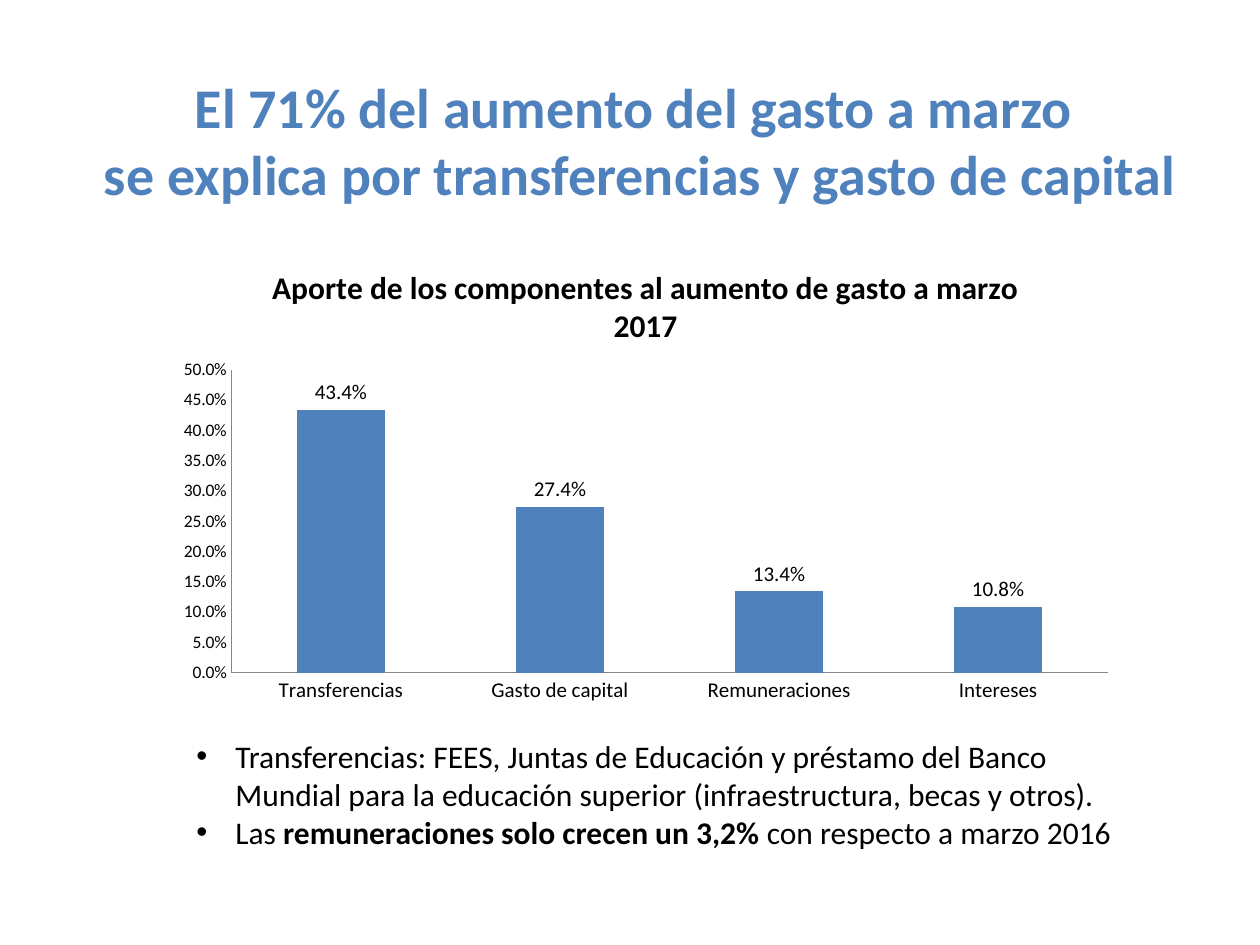
from typing import NamedTuple

from lxml import etree
from pptx import Presentation
from pptx import util as u
from pptx.chart import data as cd
from pptx.dml.color import RGBColor
from pptx.enum import chart as ch, text
from pptx.oxml import parse_xml
from pptx.oxml.ns import nsdecls, qn

SCALE = 914400 / 126  # EMU in one px


class Theme(NamedTuple):
    font: str = "Calibri"
    blue: str = "4F81BD"
    black: str = "000000"
    gray: str = "868686"
    head: int = 32
    body: int = 18
    label: int = 12
    tick: int = 10


class Box(NamedTuple):
    left: int
    top: int
    width: int
    height: int


class Run(NamedTuple):
    words: str
    bold: bool = False


class Block(NamedTuple):
    box: Box
    lines: list[list[Run]]
    size: int
    color: str
    indent: int = 0  # above zero: bulleted with this hanging indent


THEME = Theme()

TITLE = Block(Box(0, 66, 1268, 149), [
    [Run("El 71% del aumento del gasto a marzo", True)],
    [Run(" se explica por transferencias y gasto de capital", True)],
], THEME.head, THEME.blue)

NOTES = Block(Box(184, 731, 963, 127), [
    [Run("Transferencias: FEES, Juntas de Educación y préstamo del Banco Mundial "
         "para la educación superior (infraestructura, becas y otros).")],
    [Run("Las "), Run("remuneraciones solo crecen un 3,2% ", True),
     Run("con respecto a marzo 2016")],
], THEME.body, THEME.black, 39)

CHART = Box(164, 244, 963, 466)
PLOT = Box(230, 368, 877, 303)
HEADING = "Aporte de los componentes al aumento de gasto a marzo 2017"
SHARES = {"Transferencias": 0.434, "Gasto de capital": 0.274,
          "Remuneraciones": 0.134, "Intereses": 0.108}
PERCENT = "0.0%"


def px(length: int) -> int:
    return round(length * SCALE)


def place(box: Box) -> list[int]:
    return [px(side) for side in box]


def style(font, size: int, color: str = THEME.black, bold: bool = False) -> None:
    font.name, font.size, font.bold = THEME.font, u.Pt(size), bold
    font.color.rgb = RGBColor.from_string(color)


def bullet(para, indent: int) -> None:
    props = para._p.get_or_add_pPr()
    props.set("marL", str(px(indent)))
    props.set("indent", str(-px(indent)))
    face = etree.SubElement(props, qn("a:buFont"))
    face.set("typeface", "Arial")
    mark = etree.SubElement(props, qn("a:buChar"))
    mark.set("char", "•")


def write(slide, block: Block) -> None:
    frame = slide.shapes.add_textbox(*place(block.box)).text_frame
    frame.word_wrap = True
    frame.auto_size = text.MSO_AUTO_SIZE.SHAPE_TO_FIT_TEXT
    for i, line in enumerate(block.lines):
        para = frame.add_paragraph() if i else frame.paragraphs[0]
        if block.indent:
            bullet(para, block.indent)
        else:
            para.alignment = text.PP_ALIGN.CENTER
        for part in line:
            run = para.add_run()
            run.text = part.words
            style(run.font, block.size, block.color, part.bold)


def fix_plot(chart, box: Box, plot: Box) -> None:
    """Pin the inner plot area as shares of the chart's box."""
    spots = {"x": (plot.left - box.left) / box.width,
             "y": (plot.top - box.top) / box.height,
             "w": plot.width / box.width, "h": plot.height / box.height}
    modes = "".join(f'<c:{k}Mode val="edge"/>' for k in "xy")
    sides = "".join(f'<c:{k} val="{v:.2f}"/>' for k, v in spots.items())
    area = chart._chartSpace.chart.plotArea
    for old in area.findall(qn("c:layout")):
        area.remove(old)
    area.insert(0, parse_xml(
        f'<c:layout {nsdecls("c")}><c:manualLayout><c:layoutTarget val="inner"/>'
        f"{modes}{sides}</c:manualLayout></c:layout>"))


def draw_chart(slide) -> None:
    data = cd.CategoryChartData(number_format=PERCENT)
    data.categories = list(SHARES)
    data.add_series("Series 1", list(SHARES.values()))
    chart = slide.shapes.add_chart(
        ch.XL_CHART_TYPE.COLUMN_CLUSTERED, *place(CHART), data).chart
    style(chart.font, THEME.tick)
    chart.has_legend = False

    # Heading
    chart.has_title = True
    run = chart.chart_title.text_frame.paragraphs[0].add_run()
    run.text = HEADING
    style(run.font, THEME.body, bold=True)
    chart.chart_title.include_in_layout = False

    # Axes
    for axis, size in ((chart.category_axis, THEME.label),
                       (chart.value_axis, THEME.tick)):
        axis.has_major_gridlines = False
        axis.major_tick_mark = axis.minor_tick_mark = ch.XL_TICK_MARK.NONE
        axis.format.line.color.rgb = RGBColor.from_string(THEME.gray)
        axis.format.line.width = u.Pt(0.75)
        style(axis.tick_labels.font, size)
    scale = chart.value_axis
    scale.minimum_scale, scale.maximum_scale, scale.major_unit = 0, 0.5, 0.05
    scale.tick_labels.number_format = PERCENT
    scale.tick_labels.number_format_is_linked = False

    # Columns and their labels
    plot = chart.plots[0]
    plot.gap_width, plot.vary_by_categories = 150, False
    fill = plot.series[0].format.fill
    fill.solid()
    fill.fore_color.rgb = RGBColor.from_string(THEME.blue)
    plot.has_data_labels = True
    labels = plot.data_labels
    labels.show_value = True
    labels.number_format, labels.number_format_is_linked = PERCENT, False
    labels.position = ch.XL_LABEL_POSITION.OUTSIDE_END
    style(labels.font, THEME.label)
    fix_plot(chart, CHART, PLOT)


def main() -> None:
    deck = Presentation()
    deck.slide_width, deck.slide_height = px(1260), px(945)
    slide = deck.slides.add_slide(deck.slide_layouts[6])
    write(slide, TITLE)
    write(slide, NOTES)
    draw_chart(slide)
    deck.save("out.pptx")


if __name__ == "__main__":
    main()
